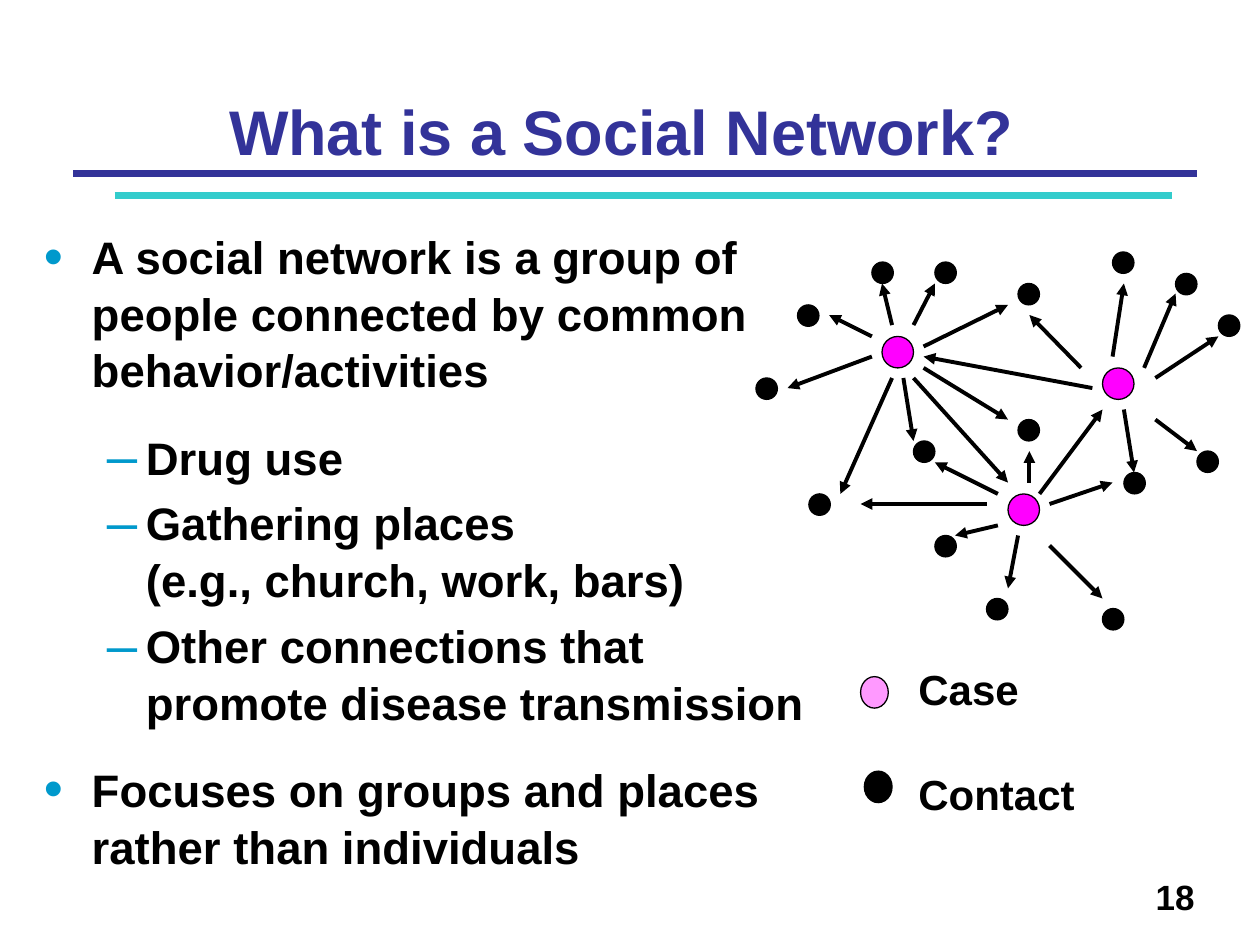
from lxml import etree
from pptx import Presentation
from pptx.dml.color import RGBColor
from pptx.enum.shapes import MSO_CONNECTOR, MSO_SHAPE
from pptx.enum.text import MSO_ANCHOR, PP_ALIGN
from pptx.oxml.ns import qn
from pptx.util import Inches, Pt

LEFT, CENTER, RIGHT = PP_ALIGN.LEFT, PP_ALIGN.CENTER, PP_ALIGN.RIGHT
TOP, BOTTOM = MSO_ANCHOR.TOP, MSO_ANCHOR.BOTTOM
OVAL, LINE = MSO_SHAPE.OVAL, MSO_CONNECTOR.STRAIGHT

NAVY = RGBColor(0x33, 0x33, 0x99)
TEAL = RGBColor(0x33, 0xCC, 0xCC)
BLUE = RGBColor(0x00, 0x99, 0xCC)
PINK = RGBColor(0xFF, 0x00, 0xFF)
PALE = RGBColor(0xFF, 0x99, 0xFF)
BLACK = RGBColor(0x00, 0x00, 0x00)

# Content: (text, level, space before in points)
POINTS = [
    ("A social network is a group of people connected by common "
     "behavior/activities", 0, 5.2),
    ("Drug use", 1, 17.4),
    ("Gathering places\v(e.g., church, work, bars)", 1, 5.2),
    ("Other connections that promote disease transmission", 1, 5.2),
    ("Focuses on groups and places rather than individuals", 0, 17.4),
]
# Bullet sign, left margin and hanging indent of each level
LEVELS = [("•", 0.38, -0.38), ("–", 0.81, -0.31)]

RULES = [(0.58, 9.5, 1.38, NAVY), (0.91, 9.3, 1.55, TEAL)]

# Left and top of each person in the network
CASES = [(7, 2.67), (8, 3.92), (8.75, 2.92)]
CONTACTS = [
    (6, 3), (7.25, 3.5), (6.33, 2.42), (7.42, 4.25), (8.08, 2.25),
    (8.75, 4.83), (7.83, 4.75), (8.92, 3.75), (8.08, 3.33), (9.67, 2.5),
    (9.33, 2.17), (9.5, 3.58), (8.83, 2), (7.42, 2.08), (6.42, 3.92),
    (6.92, 2.08),
]
# Arrows, by the case they leave: x, y to x, y
ARROWS = [
    # left case
    (6.92, 2.83, 6.25, 3.08), (7.25, 3, 8, 3.83), (7.33, 2.92, 8, 3.33),
    (7.33, 2.75, 8, 2.42), (7.17, 3, 7.25, 3.5), (7.08, 3, 6.67, 3.92),
    (7.08, 2.58, 7, 2.25), (7.25, 2.58, 7.42, 2.25),
    (6.92, 2.67, 6.58, 2.5),
    # lower case
    (8.25, 3.92, 8.75, 3.25), (8.17, 3.83, 8.17, 3.58),
    (8.33, 4.33, 8.75, 4.75), (8.33, 4, 8.83, 3.83),
    (7.92, 4.17, 7.58, 4.25), (7.92, 3.92, 7.42, 3.67),
    (8.08, 4.25, 8, 4.67), (7.83, 4, 6.83, 4),
    # right case
    (8.92, 3.25, 9, 3.75), (8.58, 2.92, 8.17, 2.5),
    (8.67, 3.08, 7.33, 2.83), (9.17, 3.33, 9.5, 3.58),
    (9.17, 3, 9.67, 2.67), (9.08, 2.92, 9.33, 2.33),
    (8.83, 2.83, 8.92, 2.25),
]
KEYS = [("Case", 0, 0), ("Contact", 0, 30)]
KEY_DOTS = [(6.83, 5.37, PALE), (6.86, 6.12, BLACK)]


def set_bullet(para, level):
    sign, margin, indent = LEVELS[level]
    props = para._p.get_or_add_pPr()
    props.set("marL", str(Inches(margin)))
    props.set("indent", str(Inches(indent)))
    color = etree.SubElement(props, qn("a:buClr"))
    etree.SubElement(color, qn("a:srgbClr"), val=str(BLUE))
    etree.SubElement(props, qn("a:buSzPct"), val="120000")
    etree.SubElement(props, qn("a:buFont"), typeface="Arial")
    etree.SubElement(props, qn("a:buChar"), char=sign)


def add_text(slide, paras, box, size, color=BLACK, align=LEFT, anchor=TOP,
             spacing=None, bullets=False):
    frame = slide.shapes.add_textbox(*map(Inches, box)).text_frame
    frame.word_wrap = True
    frame.vertical_anchor = anchor
    for i, (text, level, before) in enumerate(paras):
        para = frame.add_paragraph() if i else frame.paragraphs[0]
        para.text = text
        para.level = level
        para.alignment = align
        para.space_before = Pt(before)
        if spacing:
            para.line_spacing = spacing
        if bullets:
            set_bullet(para, level)
        for run in para.runs:
            font = run.font
            font.name, font.size, font.bold = "Arial", Pt(size), True
            font.color.rgb = color


def add_line(slide, ends, color, width, arrow=False):
    line = slide.shapes.add_connector(LINE, *map(Inches, ends))
    line.line.color.rgb = color
    line.line.width = Pt(width)
    if arrow:
        etree.SubElement(line.line._get_or_add_ln(), qn("a:tailEnd"),
                         type="triangle")
    etree.SubElement(line._element.spPr, qn("a:effectLst"))


def add_dot(slide, x, y, wide, high, color):
    dot = slide.shapes.add_shape(OVAL, *map(Inches, (x, y, wide, high)))
    dot.shadow.inherit = False
    dot.fill.solid()
    dot.fill.fore_color.rgb = color
    dot.line.color.rgb = BLACK
    dot.line.width = Pt(0.75)


def main():
    deck = Presentation()
    deck.slide_width, deck.slide_height = Inches(10), Inches(7.5)
    slide = deck.slides.add_slide(deck.slide_layouts[6])

    # Heading, rules, body and page number
    for left, right, y, color in RULES:
        add_line(slide, (left, y, right, y), color, 4)
    add_text(slide, [("What is a Social Network? ", 0, 0)],
             (0.5, 0.13, 9, 1.25), 36, color=NAVY, align=CENTER,
             anchor=BOTTOM)
    add_text(slide, POINTS, (0.25, 1.75, 6.5, 5.15), 26, spacing=1.04,
             bullets=True)
    add_text(slide, [("18", 0, 0)], (4.83, 6.9, 4.75, 0.52), 20, align=RIGHT)

    # Network
    for spots, size, color in ((CASES, 0.25, PINK), (CONTACTS, 0.17, BLACK)):
        for x, y in spots:
            add_dot(slide, x, y, size, size, color)
    for ends in ARROWS:
        add_line(slide, ends, BLACK, 2.25, arrow=True)

    # Key
    for x, y, color in KEY_DOTS:
        add_dot(slide, x, y, 0.22, 0.25, color)
    add_text(slide, KEYS, (7.19, 5.2, 2.59, 1.3), 24, spacing=1.04)

    deck.save("out.pptx")


if __name__ == "__main__":
    main()
